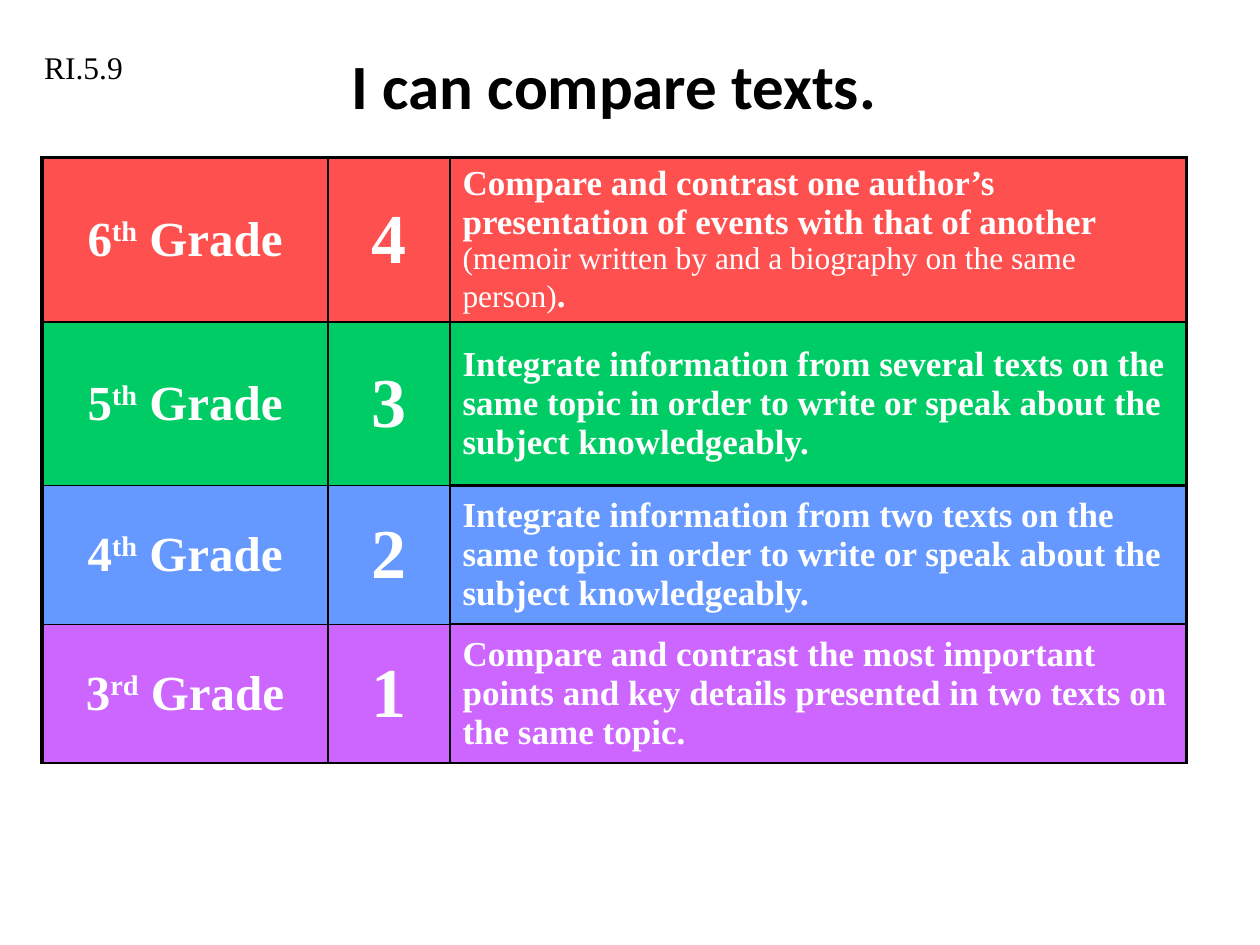
from lxml.etree import SubElement
from pptx import Presentation
from pptx.dml.color import RGBColor
from pptx.enum.text import MSO_ANCHOR as Anchor, PP_ALIGN as Align
from pptx.oxml.ns import qn
from pptx.util import Cm, Pt

TITLE = "I can compare texts."
STANDARD = "RI.5.9"
LEVELS = [
    ("6", "th", "4", "FF5050", [
        ("Compare and contrast one author’s presentation of events with that of another ", 20, True),
        ("(memoir written by and a biography on the same person)", 18, False),
        (".", 20, True)]),
    ("5", "th", "3", "00CC66", [
        ("Integrate information from several texts on the same topic in order "
         "to write or speak about the subject knowledgeably.", 20, True)]),
    ("4", "th", "2", "6699FF", [
        ("Integrate information from two texts on the same topic in order "
         "to write or speak about the subject knowledgeably.", 20, True)]),
    ("3", "rd", "1", "CC66FF", [
        ("Compare and contrast the most important points and key details "
         "presented in two texts on the same topic.", 20, True)]),
]
COLUMN_WIDTHS = [5.76, 2.46, 14.85]
ROW_HEIGHTS = [3.3, 3.3, 2.8, 2.8]
UPRIGHT_RULES = [2.25, 1, 1, 2.25]
LEVEL_RULES = [2.25, 1.5, 1, 1, 1.5]
GOAL_RULES = [2.25, 1.5, 1.5, 1.5, 1.5]
SERIF = "Times New Roman"


def color(value):
    return RGBColor.from_string(value)


def add_run(paragraph, text, size, bold=True, ink="FFFFFF", face=SERIF, raised=False):
    run = paragraph.add_run()
    run.text = text
    run.font.size = Pt(size)
    run.font.bold = bold
    run.font.name = face
    run.font.color.rgb = color(ink)
    if raised:
        run._r.get_or_add_rPr().set("baseline", "30000")


def add_borders(cell, widths):
    props = cell._tc.get_or_add_tcPr()
    for position, (side, width) in enumerate(zip("LRTB", widths)):
        line = SubElement(props, qn(f"a:ln{side}"), w=str(Pt(width)))
        fill = SubElement(line, qn("a:solidFill"))
        SubElement(fill, qn("a:srgbClr"), val="000000")
        props.insert(position, line)


def add_title(slide):
    title = slide.shapes.title
    title.left, title.top, title.width, title.height = Cm(0.42), Cm(0.42), Cm(23.92), Cm(2.54)
    title.text_frame.vertical_anchor = Anchor.MIDDLE
    paragraph = title.text_frame.paragraphs[0]
    paragraph.alignment = Align.CENTER
    add_run(paragraph, TITLE, 36, ink="000000", face="Calibri")


def add_levels(slide):
    frame = slide.shapes.add_table(
        len(LEVELS), len(COLUMN_WIDTHS), Cm(0.85), Cm(3.18),
        Cm(sum(COLUMN_WIDTHS)), Cm(sum(ROW_HEIGHTS)))
    table = frame.table
    table.first_row = table.horz_banding = False
    for column, width in zip(table.columns, COLUMN_WIDTHS):
        column.width = Cm(width)
    for row, height in zip(table.rows, ROW_HEIGHTS):
        row.height = Cm(height)

    for r, (grade, suffix, score, shade, goal) in enumerate(LEVELS):
        cells = table.rows[r].cells
        for c, cell in enumerate(cells):
            cell.fill.solid()
            cell.fill.fore_color.rgb = color(shade)
            cell.vertical_anchor = Anchor.MIDDLE
            rules = GOAL_RULES if c == 2 else LEVEL_RULES
            add_borders(cell, UPRIGHT_RULES[c:c + 2] + rules[r:r + 2])
        grade_line, score_line, goal_line = (cell.text_frame.paragraphs[0] for cell in cells)
        grade_line.alignment = score_line.alignment = Align.CENTER
        add_run(grade_line, grade, 28)
        add_run(grade_line, suffix, 28, raised=True)
        add_run(grade_line, " Grade", 28)
        add_run(score_line, score, 40)
        for text, size, bold in goal:
            add_run(goal_line, text, size, bold)


def add_standard(slide):
    box = slide.shapes.add_textbox(Cm(0.64), Cm(0.85), Cm(3.6), Cm(1.02))
    box.text_frame.word_wrap = True
    add_run(box.text_frame.paragraphs[0], STANDARD, 18, bold=False, ink="000000")


def main():
    deck = Presentation()
    deck.slide_width, deck.slide_height = Cm(25.4), Cm(19.05)
    slide = deck.slides.add_slide(deck.slide_layouts[5])
    add_title(slide)
    add_levels(slide)
    add_standard(slide)
    deck.save("out.pptx")


if __name__ == "__main__":
    main()
